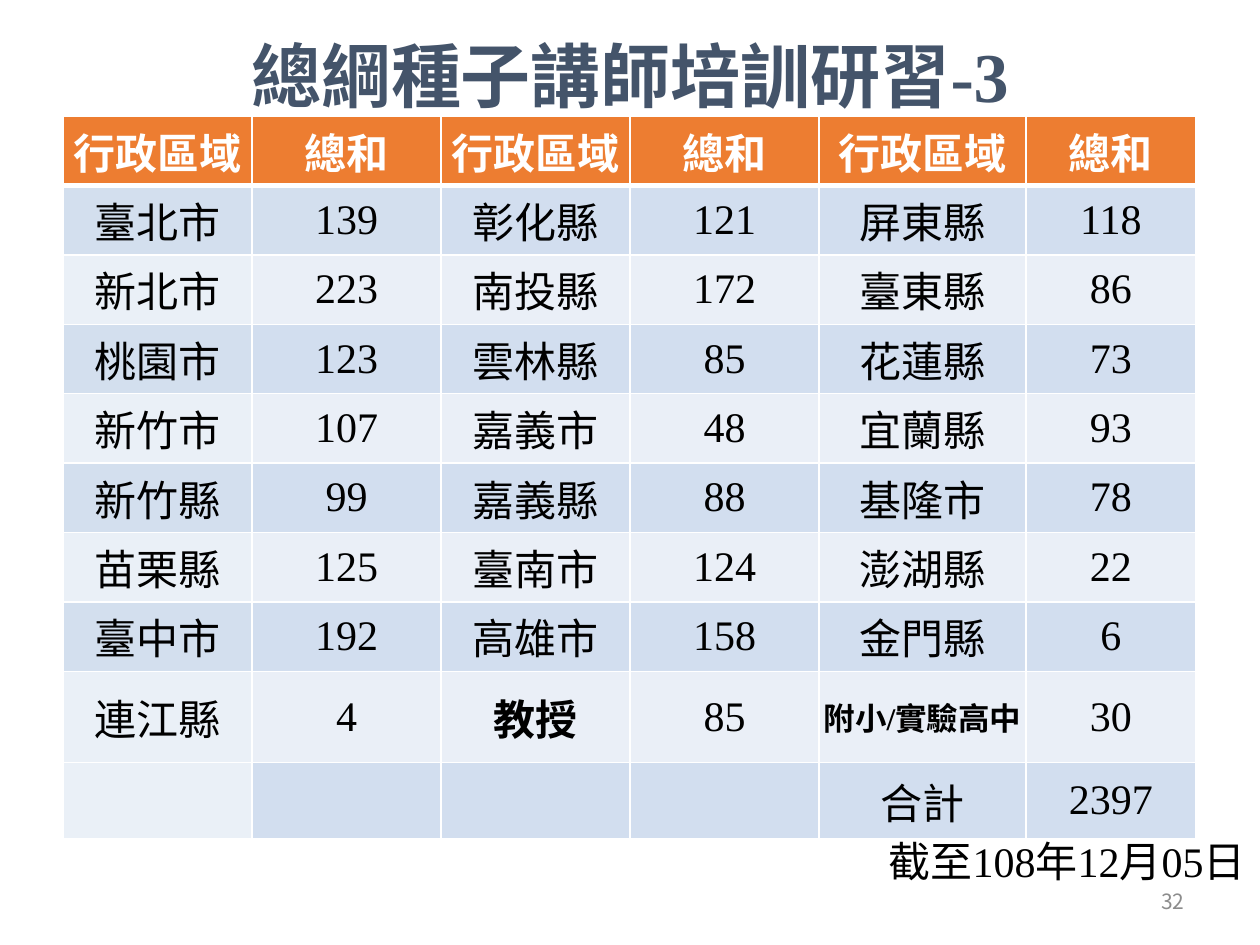
"""Build the slide of seed-lecturer training totals by administrative region."""
from dataclasses import dataclass

from lxml.etree import SubElement
from pptx import Presentation
from pptx.dml.color import RGBColor
from pptx.enum.text import MSO_ANCHOR, PP_ALIGN
from pptx.oxml.ns import qn
from pptx.util import Cm, Pt

WHITE = RGBColor(0xFF, 0xFF, 0xFF)
BLACK = RGBColor(0x00, 0x00, 0x00)
SLATE = RGBColor(0x44, 0x54, 0x6A)
GRAY = RGBColor(0x8C, 0x8C, 0x8C)
ORANGE = RGBColor(0xED, 0x7D, 0x31)
BAND_DARK = RGBColor(0xD2, 0xDE, 0xEF)
BAND_LIGHT = RGBColor(0xEA, 0xEF, 0xF7)
FIRST_DARK = RGBColor(0xD3, 0xDF, 0xEE)
FIRST_LIGHT = RGBColor(0xEA, 0xF0, 0xF7)

SERIF = "Times New Roman"
SANS = "Noto Sans CJK SC"

COL_WIDTHS = [3.81] * 4 + [4.17, 3.43]
ROW_HEIGHTS = [1.4] * 8 + [1.84, 1.54]
ROWS = [
    ["行政區域", "總和"] * 3,
    ["臺北市", "139", "彰化縣", "121", "屏東縣", "118"],
    ["新北市", "223", "南投縣", "172", "臺東縣", "86"],
    ["桃園市", "123", "雲林縣", "85", "花蓮縣", "73"],
    ["新竹市", "107", "嘉義市", "48", "宜蘭縣", "93"],
    ["新竹縣", "99", "嘉義縣", "88", "基隆市", "78"],
    ["苗栗縣", "125", "臺南市", "124", "澎湖縣", "22"],
    ["臺中市", "192", "高雄市", "158", "金門縣", "6"],
    ["連江縣", "4", "教授", "85", "附小/實驗高中", "30"],
    ["", "", "", "", "合計", "2397"],
]
BOLD_SIZES = {"教授": 24, "附小/實驗高中": 18}


@dataclass
class Label:
    text: str
    left: float
    top: float
    width: float
    height: float
    size: int
    color: RGBColor
    bold: bool = False
    font: str = SERIF
    align: PP_ALIGN = PP_ALIGN.CENTER
    anchor: MSO_ANCHOR = MSO_ANCHOR.MIDDLE


LABELS = [
    Label("總綱種子講師培訓研習-3", 1.27, -0.08, 22.86, 3.18, 40, SLATE, bold=True),
    Label("截至108年12月05日", 17.63, 16.71, 7.77, 1.27, 24, BLACK,
          anchor=MSO_ANCHOR.TOP),
    Label("32", 18.21, 17.65, 5.92, 1.02, 12, GRAY, font=SANS,
          align=PP_ALIGN.RIGHT),
]


def write(tf, text: str, *, size: int, color: RGBColor, bold: bool = False,
          font: str = SERIF, align: PP_ALIGN = PP_ALIGN.CENTER) -> None:
    p = tf.paragraphs[0]
    p.alignment = align
    r = p.add_run()
    r.text = text
    r.font.size = Pt(size)
    r.font.bold = bold
    r.font.name = font
    r.font.color.rgb = color
    SubElement(r.font._element, qn("a:ea"), typeface=SANS)


def add_label(s, label: Label) -> None:
    sp = s.shapes.add_textbox(Cm(label.left), Cm(label.top),
                              Cm(label.width), Cm(label.height))
    tf = sp.text_frame
    tf.word_wrap = True
    tf.vertical_anchor = label.anchor
    write(tf, label.text, size=label.size, color=label.color, bold=label.bold,
          font=label.font, align=label.align)


def add_borders(cell, bottom: int) -> None:
    tcPr = cell._tc.get_or_add_tcPr()
    for side, width in {"L": 1, "R": 1, "T": 1, "B": bottom}.items():
        ln = SubElement(tcPr, qn(f"a:ln{side}"), w=str(Pt(width)))
        fill = SubElement(ln, qn("a:solidFill"))
        SubElement(fill, qn("a:srgbClr"), val=str(WHITE))


def cell_fill(row: int, col: int) -> RGBColor:
    if row == 0:
        return ORANGE
    if col == 0:
        return FIRST_DARK if row % 2 and row < len(ROWS) - 1 else FIRST_LIGHT
    if (row, col) == (1, 1):
        return FIRST_DARK
    return BAND_DARK if row % 2 else BAND_LIGHT


def add_region_table(s) -> None:
    table = s.shapes.add_table(len(ROWS), len(COL_WIDTHS), Cm(1.27), Cm(2.34),
                               Cm(sum(COL_WIDTHS)), Cm(sum(ROW_HEIGHTS))).table
    for column, width in zip(table.columns, COL_WIDTHS):
        column.width = Cm(width)
    for row, height in zip(table.rows, ROW_HEIGHTS):
        row.height = Cm(height)
    for i, texts in enumerate(ROWS):
        for j, text in enumerate(texts):
            cell = table.cell(i, j)
            add_borders(cell, bottom=1 if i else 3)
            cell.fill.solid()
            cell.fill.fore_color.rgb = cell_fill(i, j)
            cell.vertical_anchor = MSO_ANCHOR.MIDDLE
            cell.margin_left = cell.margin_right = Cm(0.05)
            cell.margin_top = cell.margin_bottom = Cm(0)
            if text:
                write(cell.text_frame, text, size=BOLD_SIZES.get(text, 24),
                      color=BLACK if i else WHITE,
                      bold=i == 0 or text in BOLD_SIZES)


def main() -> None:
    prs = Presentation()
    prs.slide_width, prs.slide_height = Cm(25.4), Cm(19.05)
    s = prs.slides.add_slide(prs.slide_layouts[6])
    add_region_table(s)
    for label in LABELS:
        add_label(s, label)
    prs.save("out.pptx")


if __name__ == "__main__":
    main()
